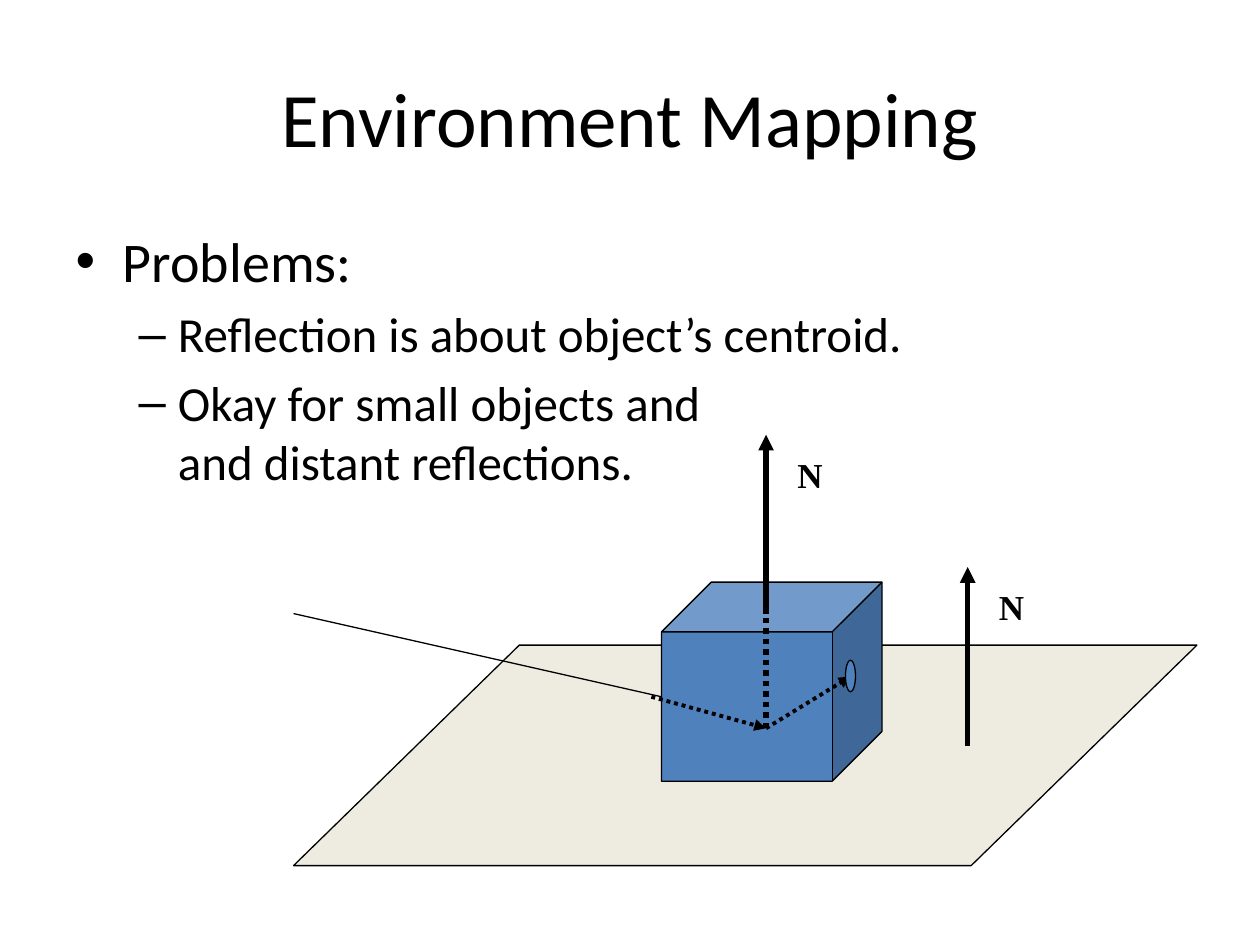
from lxml import etree
from pptx import Presentation, util as u
from pptx.dml.color import RGBColor
from pptx.enum import dml, shapes, text
from pptx.oxml.ns import qn

BLACK = RGBColor(0x00, 0x00, 0x00)
FLOOR = RGBColor(0xEE, 0xEC, 0xE1)
BLUE = RGBColor(0x4F, 0x81, 0xBD)


def format_runs(paragraph, size, font, bold=False):
    for run in paragraph.runs:
        run.font.size = u.Pt(size)
        run.font.name = font
        run.font.bold = bold
        run.font.color.rgb = BLACK


def place(placeholder, left, top, width, height):
    placeholder.left, placeholder.top = u.Inches(left), u.Inches(top)
    placeholder.width, placeholder.height = u.Inches(width), u.Inches(height)


def fill_title(slide, wording):
    title = slide.shapes.title
    place(title, 0.5, 0.3, 9, 1.25)
    title.text_frame.text = wording
    title.text_frame.vertical_anchor = text.MSO_ANCHOR.MIDDLE
    title.text_frame.paragraphs[0].alignment = text.PP_ALIGN.CENTER
    format_runs(title.text_frame.paragraphs[0], 44, "Calibri")


def fill_body(slide, items):
    body = slide.placeholders[1]
    place(body, 0.5, 1.75, 9, 4.95)
    frame = body.text_frame
    for i, (level, wording) in enumerate(items):
        paragraph = frame.paragraphs[0] if i == 0 else frame.add_paragraph()
        paragraph.text = wording
        paragraph.level = level
        format_runs(paragraph, 28 if level else 32, "Calibri")


def add_solid(slide, preset, left, top, width, height, color, adjust=None):
    solid = slide.shapes.add_shape(preset, u.Inches(left), u.Inches(top),
                                   u.Inches(width), u.Inches(height))
    solid.shadow.inherit = False
    solid.fill.solid()
    solid.fill.fore_color.rgb = color
    solid.line.color.rgb = BLACK
    solid.line.width = u.Pt(0.75)
    if adjust is not None:
        solid.adjustments[0] = adjust


def add_ray(slide, start, end, width, dotted=False, arrow=False):
    ray = slide.shapes.add_connector(
        shapes.MSO_CONNECTOR.STRAIGHT,
        *(u.Inches(value) for value in (*start, *end)))
    ray.line.color.rgb = BLACK
    ray.line.width = u.Pt(width)
    if dotted:
        ray.line.dash_style = dml.MSO_LINE.ROUND_DOT
    properties = ray._element.spPr
    if arrow:
        etree.SubElement(properties.find(qn("a:ln")), qn("a:tailEnd"), type="triangle")
    etree.SubElement(properties, qn("a:effectLst"))


def add_normal(slide, x, base, tip):
    """Upward normal vector with its label beside the tip."""
    add_ray(slide, (x, base), (x, tip), 3, arrow=True)
    label = slide.shapes.add_textbox(u.Inches(x + 0.15), u.Inches(tip + 0.1),
                                     u.Inches(0.4), u.Inches(0.43))
    label.text_frame.word_wrap = False
    label.text_frame.auto_size = text.MSO_AUTO_SIZE.SHAPE_TO_FIT_TEXT
    label.text_frame.text = "N"
    format_runs(label.text_frame.paragraphs[0], 20, "Times New Roman", bold=True)


def main():
    deck = Presentation()
    deck.slide_width, deck.slide_height = u.Inches(10), u.Inches(7.5)
    slide = deck.slides.add_slide(deck.slide_layouts[1])

    # Title and list
    fill_title(slide, "Environment Mapping")
    fill_body(slide, [
        (0, "Problems:"),
        (1, "Reflection is about object’s centroid."),
        (1, "Okay for small objects and\vand distant reflections."),
    ])

    # Floor and reflecting cube
    preset = shapes.MSO_SHAPE
    add_solid(slide, preset.PARALLELOGRAM, 2.33, 5.12, 7.17, 1.75, FLOOR, 1.024)
    add_solid(slide, preset.CUBE, 5.25, 4.62, 1.75, 1.58, BLUE, 0.25)

    # Incoming and reflected rays through the centroid
    centroid = (6.08, 5.78)
    cube_top = 4.87
    add_ray(slide, (5.17, 5.53), centroid, 2.25, dotted=True, arrow=True)
    add_ray(slide, centroid, (6.75, 5.37), 2.25, dotted=True, arrow=True)
    add_ray(slide, (5.25, 5.53), (2.33, 4.87), 0.75)
    add_solid(slide, preset.OVAL, 6.71, 5.24, 0.08, 0.25, BLUE)

    # Normals of the cube and of the floor
    add_ray(slide, centroid, (centroid[0], cube_top), 3, dotted=True)
    add_normal(slide, centroid[0], cube_top, 3.45)
    add_normal(slide, 7.68, 5.92, 4.5)

    deck.save("out.pptx")


if __name__ == "__main__":
    main()
